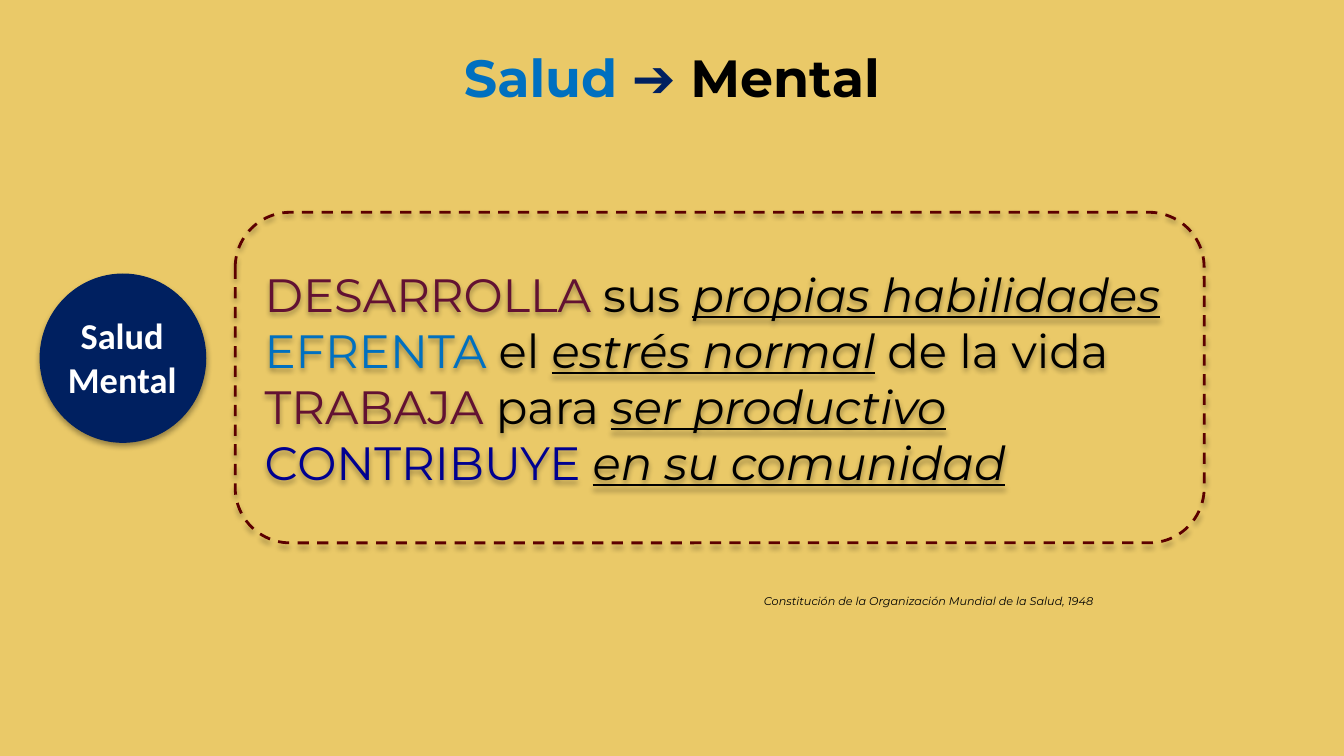
import lxml.etree
import pptx
import pptx.dml.color
import pptx.enum.dml
import pptx.enum.shapes
import pptx.enum.text
import pptx.oxml.ns
import pptx.util

RGBColor = pptx.dml.color.RGBColor
SAND = RGBColor(0xEA, 0xC9, 0x68)
BLUE = RGBColor(0x00, 0x70, 0xC0)
NAVY = RGBColor(0x00, 0x20, 0x60)
INDIGO = RGBColor(0x00, 0x00, 0x90)
WINE = RGBColor(0x62, 0x11, 0x32)
MAROON = RGBColor(0x5C, 0x00, 0x00)
BLACK = RGBColor(0x00, 0x00, 0x00)
WHITE = RGBColor(0xFF, 0xFF, 0xFF)

ALIGN = pptx.enum.text.PP_ALIGN
ANCHOR = pptx.enum.text.MSO_ANCHOR
SHAPE = pptx.enum.shapes.MSO_SHAPE
CELL = 0.1
COLUMNS, ROWS = 100, 56.25


class SlideBuilder:
    font = "Montserrat"

    def __init__(self, deck):
        self.slide = deck.slides.add_slide(deck.slide_layouts[6])
        background = self.slide.background.fill
        background.solid()
        background.fore_color.rgb = SAND

    def cells(self, *counts):
        return [pptx.util.Inches(count * CELL) for count in counts]

    def set_lines(self, box, lines, size, align, font=None, bold=None, anchor=ANCHOR.TOP, wrap=True):
        frame = box.text_frame
        frame.word_wrap = wrap
        frame.vertical_anchor = anchor
        for number, line in enumerate(lines):
            paragraph = frame.paragraphs[0] if number == 0 else frame.add_paragraph()
            paragraph.alignment = align
            paragraph.font.name = font or self.font
            paragraph.font.size = pptx.util.Pt(size)
            paragraph.font.bold = bold
            for words, color, stressed in line:
                run = paragraph.add_run()
                run.text = words
                run.font.color.rgb = color
                if stressed:
                    run.font.italic = True
                    run.font.underline = True

    def text(self, area, lines, size, align, **style):
        box = self.slide.shapes.add_textbox(*self.cells(*area))
        self.set_lines(box, lines, size, align, **style)
        return box

    def shape(self, kind, area, line, width, fill=None, dash=None):
        shape = self.slide.shapes.add_shape(kind, *self.cells(*area))
        if fill is None:
            shape.fill.background()
        else:
            shape.fill.solid()
            shape.fill.fore_color.rgb = fill
        shape.line.color.rgb = line
        shape.line.width = pptx.util.Pt(width)
        if dash is not None:
            shape.line.dash_style = dash
        self.cast_shadow(shape)
        return shape

    def cast_shadow(self, shape):
        qn = pptx.oxml.ns.qn
        shape.shadow.inherit = False
        effects = shape.element.spPr.find(qn("a:effectLst"))
        shadow = lxml.etree.SubElement(
            effects, qn("a:outerShdw"), blurRad=str(pptx.util.Pt(3.1)),
            dist=str(pptx.util.Pt(1.8)), dir="5400000", rotWithShape="0")
        color = lxml.etree.SubElement(shadow, qn("a:srgbClr"), val=str(BLACK))
        lxml.etree.SubElement(color, qn("a:alpha"), val="35000")

    def group(self, *members):
        self.slide.shapes.add_group_shape(members)


def main():
    deck = pptx.Presentation()
    deck.slide_width = pptx.util.Inches(COLUMNS * CELL)
    deck.slide_height = pptx.util.Inches(ROWS * CELL)
    page = SlideBuilder(deck)

    title = [("Salud ", BLUE, False), ("➔ ", NAVY, False), ("Mental", BLACK, False)]
    page.text((5, 1, 90, 9.4), [title], 28, ALIGN.CENTER, bold=True, anchor=ANCHOR.MIDDLE)

    abilities = [
        (WINE, "DESARROLLA", " sus ", "propias habilidades", ""),
        (BLUE, "EFRENTA", " el ", "estrés normal", " de la vida"),
        (WINE, "TRABAJA", " para ", "ser productivo", ""),
        (INDIGO, "CONTRIBUYE", " ", "en su comunidad", ""),
    ]
    lines = [
        [part for part in ((verb, color, False), (link, BLACK, False),
                           (goal, BLACK, True), (ending, BLACK, False)) if part[0]]
        for color, verb, link, goal, ending in abilities
    ]
    definition = page.shape(SHAPE.ROUNDED_RECTANGLE, (17.5, 15.8, 72.1, 24.6), MAROON, 1.5,
                            dash=pptx.enum.dml.MSO_LINE.DASH)
    page.set_lines(definition, lines, 25, ALIGN.JUSTIFY, anchor=ANCHOR.MIDDLE)

    disc = page.shape(SHAPE.OVAL, (3, 20.4, 12.3, 12.5), NAVY, 0.75, fill=NAVY)
    topic = page.text((2.3, 22.8, 13.6, 7.6), [[("Salud Mental", WHITE, False)]], 19.5,
                      ALIGN.CENTER, font="Calibri", bold=True)
    page.group(disc, topic)

    citation = "Constitución de la Organización Mundial de la Salud, 1948"
    credit = page.text((55.4, 43.7, 26.9, 2), [[(citation, BLACK, False)]], 6,
                       ALIGN.RIGHT, wrap=False)
    credit.text_frame.paragraphs[0].font.italic = True

    deck.save("out.pptx")


if __name__ == "__main__":
    main()
